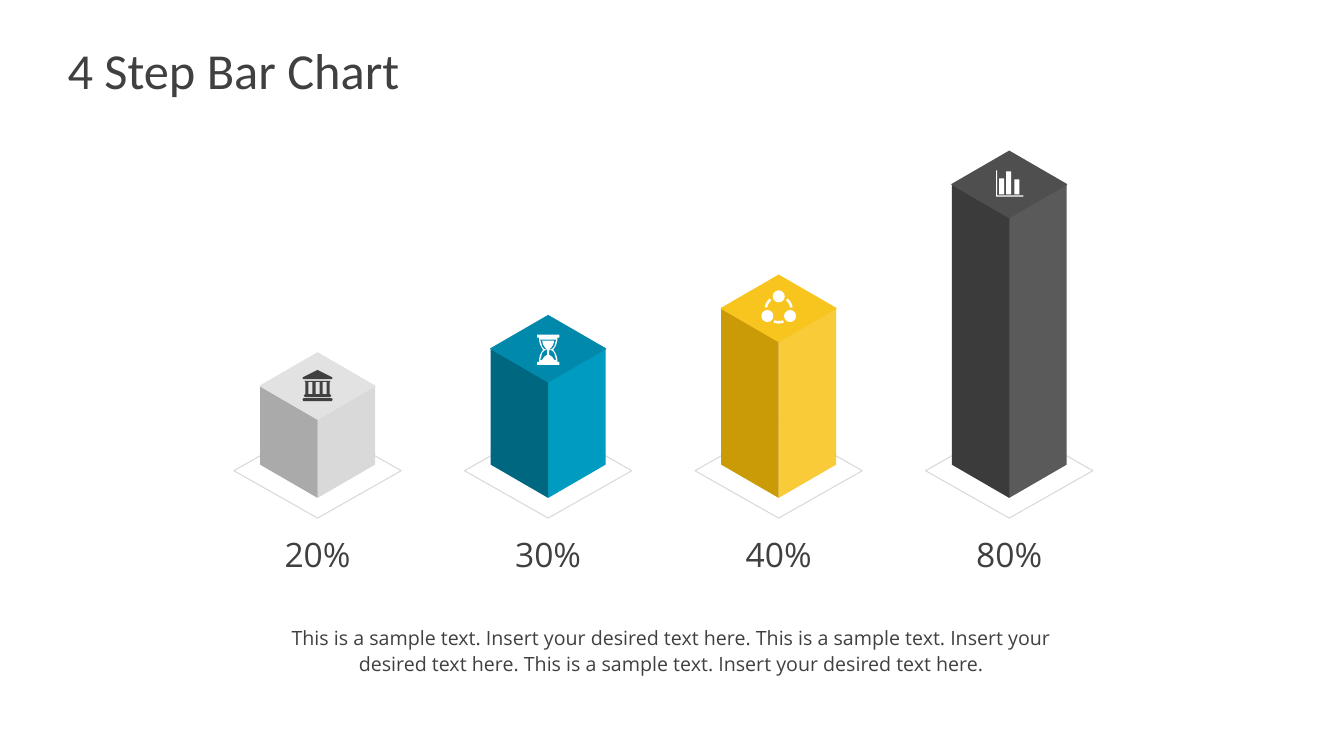
from math import cos, radians, sin

from pptx import Presentation
from pptx.dml.color import RGBColor
from pptx.enum.shapes import MSO_SHAPE
from pptx.enum.text import MSO_ANCHOR, MSO_AUTO_SIZE, PP_ALIGN
from pptx.util import Inches, Pt

RECTANGLE, OVAL = MSO_SHAPE.RECTANGLE, MSO_SHAPE.OVAL
LEFT, CENTER = PP_ALIGN.LEFT, PP_ALIGN.CENTER
TOP, MIDDLE = MSO_ANCHOR.TOP, MSO_ANCHOR.MIDDLE
NO_FIT = MSO_AUTO_SIZE.NONE
DARK, WHITE, PALE = "404040", "FFFFFF", "D9D9D9"
UNITS = 1000


def paint(shape, fill=None, line=None):
    shape.shadow.inherit = False
    if fill:
        shape.fill.solid()
        shape.fill.fore_color.rgb = RGBColor.from_string(fill)
    else:
        shape.fill.background()
    if line:
        shape.line.color.rgb = RGBColor.from_string(line)
        shape.line.width = Pt(0)
    else:
        shape.line.fill.background()


def write(box, text, size, font="Open Sans", align=CENTER, anchor=TOP, wrap=True, spacing=1.0):
    frame = box.text_frame
    frame.auto_size = NO_FIT
    frame.word_wrap = wrap
    frame.vertical_anchor = anchor
    paragraph = frame.paragraphs[0]
    paragraph.alignment = align
    paragraph.line_spacing = spacing
    run = paragraph.add_run()
    run.text = text
    run.font.size = Pt(size)
    run.font.name = font
    run.font.color.rgb = RGBColor.from_string(DARK)


deck = Presentation()
deck.slide_width, deck.slide_height = Inches(13.33), Inches(7.5)
slide = deck.slides.add_slide(deck.slide_layouts[5])
shapes = slide.shapes

title = shapes.title
title.left, title.top, title.width, title.height = map(Inches, (0.67, 0.3, 12, 0.78))
title.text_frame.margin_left = title.text_frame.margin_right = 0
write(title, "4 Step Bar Chart", 36, font="Calibri", align=LEFT, anchor=MIDDLE)

roof = [(0, -0.16), (0.14, -0.09), (0.15, -0.08), (0.14, -0.07),
        (-0.14, -0.07), (-0.15, -0.08), (-0.14, -0.09)]
plinth = [(-0.14, 0.12), (0.14, 0.12), (0.15, 0.135), (0.14, 0.15),
          (-0.14, 0.15), (-0.15, 0.135)]
hall = [(-0.13, -0.05), (0.13, -0.05), (0.12, -0.04), (0.12, 0.08), (0.135, 0.09),
        (0.135, 0.1), (0.12, 0.11), (-0.12, 0.11), (-0.135, 0.1), (-0.135, 0.09),
        (-0.12, 0.08), (-0.12, -0.04)]
windows = [[(x, -0.04), (x, 0.08), (x + 0.04, 0.08), (x + 0.04, -0.04)]
           for x in (-0.09, -0.02, 0.05)]
bank = [[roof], [plinth], [hall, *windows]]

case = [(0.11, -0.15), (0.11, -0.12), (0.09, -0.12), (0.09, -0.09),
        (0.08, -0.05), (0.07, -0.03), (0.05, 0)]
glass = [(0.08, -0.1), (0.07, -0.07), (0.06, -0.03), (0.04, -0.01), (0.02, 0)]
sand = [(0.06, -0.09), (0.05, -0.05), (0.03, -0.02), (0.02, -0.01),
        (0.01, 0.01), (0.01, 0.05), (0.04, 0.07), (0.06, 0.1)]
case_side, glass_side = [half + [(x, -y) for x, y in half[-2::-1]] for half in (case, glass)]
hourglass = [[[(x, y + 0.01) for x, y in side + [(-x, y) for x, y in side[::-1]]]
              for side in (case_side, glass_side, sand)]]

cycle = []
for middle in (90, 210, 330):
    sweep = range(middle - 21, middle + 22, 7)
    rim = [(0.14, angle) for angle in sweep] + [(0.115, angle) for angle in reversed(sweep)]
    cycle.append([[(r * cos(radians(a)), 0.01 + r * sin(radians(a))) for r, a in rim]])
nodes = [(OVAL, 0.13 * cos(radians(a)) - 0.06, 0.13 * sin(radians(a)) - 0.05, 0.12, 0.12)
         for a in (30, 150, 270)]

axes = [[[(-0.13, -0.14), (-0.12, -0.14), (-0.12, 0.11), (0.14, 0.11),
          (0.14, 0.12), (-0.13, 0.12)]]]
columns = [(RECTANGLE, x, 0.1 - height, 0.05, height)
           for x, height in ((-0.1, 0.16), (-0.03, 0.23), (0.05, 0.15))]

bars = [
    ("20%", 3.83, "AAAAAA", PALE, "E2E2E2", DARK, bank, []),
    ("30%", 3.46, "006780", "009BC0", "0089AA", WHITE, hourglass, []),
    ("40%", 3.06, "CA9B06", "F9CB39", "F8C41E", WHITE, cycle, nodes),
    ("80%", 1.83, "3B3B3B", "5A5A5A", "4F4F4F", WHITE, axes, columns),
]
first_x, pitch = 3.15, 6.86 / 3
half_width, half_depth, floor = 0.57, 0.33, 4.61
tile_width, tile_depth, tile_y = 0.83, 0.47, 4.67

for index, (percent, lid_y, left, right, lid, ink, outlines, presets) in enumerate(bars):
    x = first_x + index * pitch
    drop = floor - lid_y
    tile = [(0, tile_y - lid_y - tile_depth), (tile_width, tile_y - lid_y),
            (0, tile_y - lid_y + tile_depth), (-tile_width, tile_y - lid_y)]
    right_face, left_face = [
        [(edge, 0), (edge, drop), (0, drop + half_depth), (0, half_depth)]
        for edge in (half_width, -half_width)]
    top_face = [(0, -half_depth), (half_width, 0), (0, half_depth), (-half_width, 0)]
    pieces = [([tile], None, PALE), ([right_face], right, None),
              ([left_face], left, None), ([top_face], lid, lid)]
    pieces += [(contours, ink, None) for contours in outlines]

    for contours, fill, line in pieces:
        placed = [[((x + dx) * UNITS, (lid_y + dy) * UNITS) for dx, dy in contour]
                  for contour in contours]
        builder = shapes.build_freeform(*placed[0][0], scale=Inches(1) / UNITS)
        builder.add_line_segments(placed[0][1:])
        for hole in placed[1:]:
            builder.move_to(*hole[0])
            builder.add_line_segments(hole[1:])
        paint(builder.convert_to_shape(), fill, line)

    for preset, dx, dy, width, height in presets:
        place = map(Inches, (x + dx, lid_y + dy, width, height))
        paint(shapes.add_shape(preset, *place), ink)

    label = shapes.add_textbox(*map(Inches, (x - 0.43, 5.25, 0.86, 0.5)))
    write(label, percent, 24, wrap=False)

caption = shapes.add_textbox(*map(Inches, (2.79, 6.14, 7.74, 0.62)))
write(caption, "This is a sample text. Insert your desired text here. "
      "This is a sample text. Insert your desired text here. "
      "This is a sample text. Insert your desired text here.", 14, spacing=1.1)

deck.save("out.pptx")
